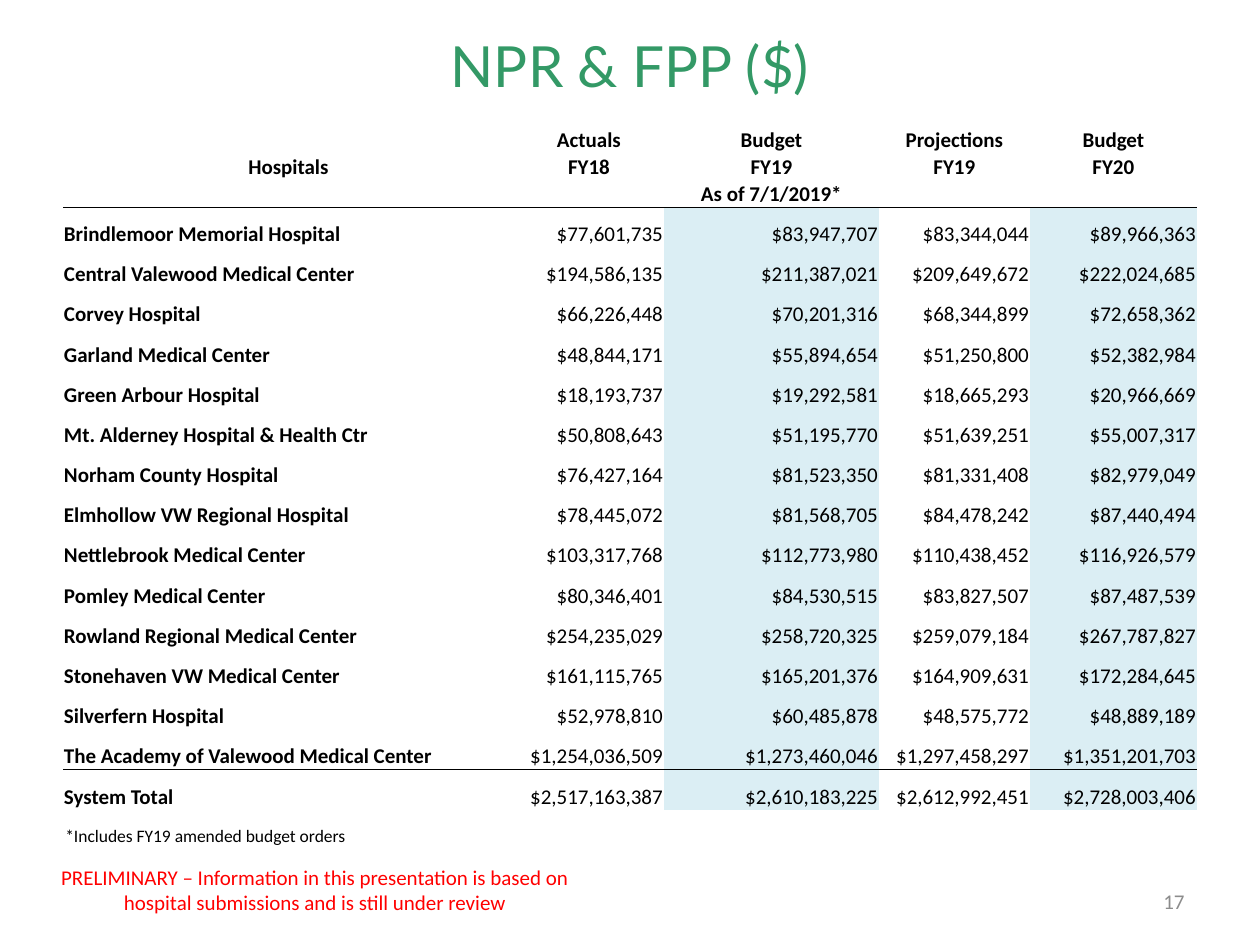
from lxml import etree
from pptx import Presentation
from pptx.dml.color import RGBColor
from pptx.enum.text import MSO_ANCHOR, MSO_AUTO_SIZE, PP_ALIGN
from pptx.oxml.ns import qn
from pptx.util import Pt

LEFT, CENTER, RIGHT = PP_ALIGN.LEFT, PP_ALIGN.CENTER, PP_ALIGN.RIGHT
TOP, MIDDLE, BOTTOM = MSO_ANCHOR.TOP, MSO_ANCHOR.MIDDLE, MSO_ANCHOR.BOTTOM
NO_AUTOFIT = MSO_AUTO_SIZE.NONE
SCALE = 914400 / 126  # EMU per px
NO_STYLE = "{2D5ABB26-0587-4C30-8999-92F81FD0307C}"


def px(*lengths):
    return [round(length * SCALE) for length in lengths]


def write(frame, text, align, size, color="000000", name="Calibri", bold=False):
    para = frame.paragraphs[0]
    para.alignment = align
    span = para.add_run()
    span.text = text
    for key, value in {"size": Pt(size), "name": name, "bold": bold}.items():
        setattr(span.font, key, value)
    span.font.color.rgb = RGBColor.from_string(color)


deck = Presentation()
deck.slide_width, deck.slide_height = px(1260, 945)
page = deck.slides.add_slide(deck.slide_layouts[5])

# Title
title = page.shapes.title
title.left, title.top, title.width, title.height = px(63, 38, 1134, 54)
title.text_frame.auto_size = NO_AUTOFIT
title.text_frame.vertical_anchor = MIDDLE
write(title.text_frame, "NPR & FPP ($)", CENTER, 32.4, "339966", "Lato")

# Table contents
header = [
    ["", "Actuals", "Budget", "Projections", "Budget"],
    ["Hospitals", "FY18", "FY19", "FY19", "FY20"],
    ["", "", "As of 7/1/2019*", "", ""],
]
hospitals = [
    ["Brindlemoor Memorial Hospital", 77601735, 83947707, 83344044, 89966363],
    ["Central Valewood Medical Center", 194586135, 211387021, 209649672, 222024685],
    ["Corvey Hospital", 66226448, 70201316, 68344899, 72658362],
    ["Garland Medical Center", 48844171, 55894654, 51250800, 52382984],
    ["Green Arbour Hospital", 18193737, 19292581, 18665293, 20966669],
    ["Mt. Alderney Hospital & Health Ctr", 50808643, 51195770, 51639251, 55007317],
    ["Norham County Hospital", 76427164, 81523350, 81331408, 82979049],
    ["Elmhollow VW Regional Hospital", 78445072, 81568705, 84478242, 87440494],
    ["Nettlebrook Medical Center", 103317768, 112773980, 110438452, 116926579],
    ["Pomley Medical Center", 80346401, 84530515, 83827507, 87487539],
    ["Rowland Regional Medical Center", 254235029, 258720325, 259079184, 267787827],
    ["Stonehaven VW Medical Center", 161115765, 165201376, 164909631, 172284645],
    ["Silverfern Hospital", 52978810, 60485878, 48575772, 48889189],
    ["The Academy of Valewood Medical Center",
     1254036509, 1273460046, 1297458297, 1351201703],
    ["System Total", 2517163387, 2610183225, 2612992451, 2728003406],
]
rows = header + [[name] + [f"${value:,}" for value in values]
                 for name, *values in hospitals]
widths = px(451, 150, 215, 151, 167)
heights = px(*[27] * len(header), *[603 / len(hospitals)] * len(hospitals))
ruled_rows = (len(header) - 1, len(rows) - 2)
budget_columns = (2, 4)

# Table
frame = page.shapes.add_table(len(rows), len(widths), *px(63, 126, 1134, 684))
frame._element.find(".//" + qn("a:tableStyleId")).text = NO_STYLE
table = frame.table
table.first_row = table.horz_banding = False
for column, width in zip(table.columns, widths):
    column.width = width
for row, height in zip(table.rows, heights):
    row.height = height

for r, texts in enumerate(rows):
    in_header = r < len(header)
    for c, text in enumerate(texts):
        cell = table.cell(r, c)
        cell.margin_left, cell.margin_top, cell.margin_right, cell.margin_bottom = px(1, 1, 1, 0)
        cell.vertical_anchor = BOTTOM
        if c in budget_columns and not in_header:
            cell.fill.solid()
            cell.fill.fore_color.rgb = RGBColor.from_string("DBEEF4")
        else:
            cell.fill.background()
        if text:
            align = CENTER if in_header else RIGHT if c else LEFT
            write(cell.text_frame, text, align, 12, bold=in_header or c == 0)
        else:  # keeps an empty cell from stretching its row
            etree.SubElement(cell.text_frame.paragraphs[0]._p, qn("a:endParaRPr"), sz="1200")
        if r in ruled_rows:
            line = etree.Element(qn("a:lnB"), w=str(Pt(0.5)))
            fill = etree.SubElement(line, qn("a:solidFill"))
            etree.SubElement(fill, qn("a:srgbClr"), val="000000")
            cell._tc.tcPr.insert(0, line)

# Disclaimer, footnote and page number
notes = [
    ("PRELIMINARY – Information in this presentation is based on hospital "
     "submissions and is still under review",
     (21, 858, 588, 63), CENTER, 12, "FF0000", TOP),
    ("*Includes FY19 amended budget orders", (53, 819, 1124, 34), LEFT, 10, "000000", TOP),
    ("17", (903, 876, 294, 50), RIGHT, 12, "8C8C8C", MIDDLE),
]
for text, place, align, size, color, anchor in notes:
    box = page.shapes.add_textbox(*px(*place))
    box.text_frame.word_wrap = True
    box.text_frame.vertical_anchor = anchor
    write(box.text_frame, text, align, size, color)

deck.save("out.pptx")
